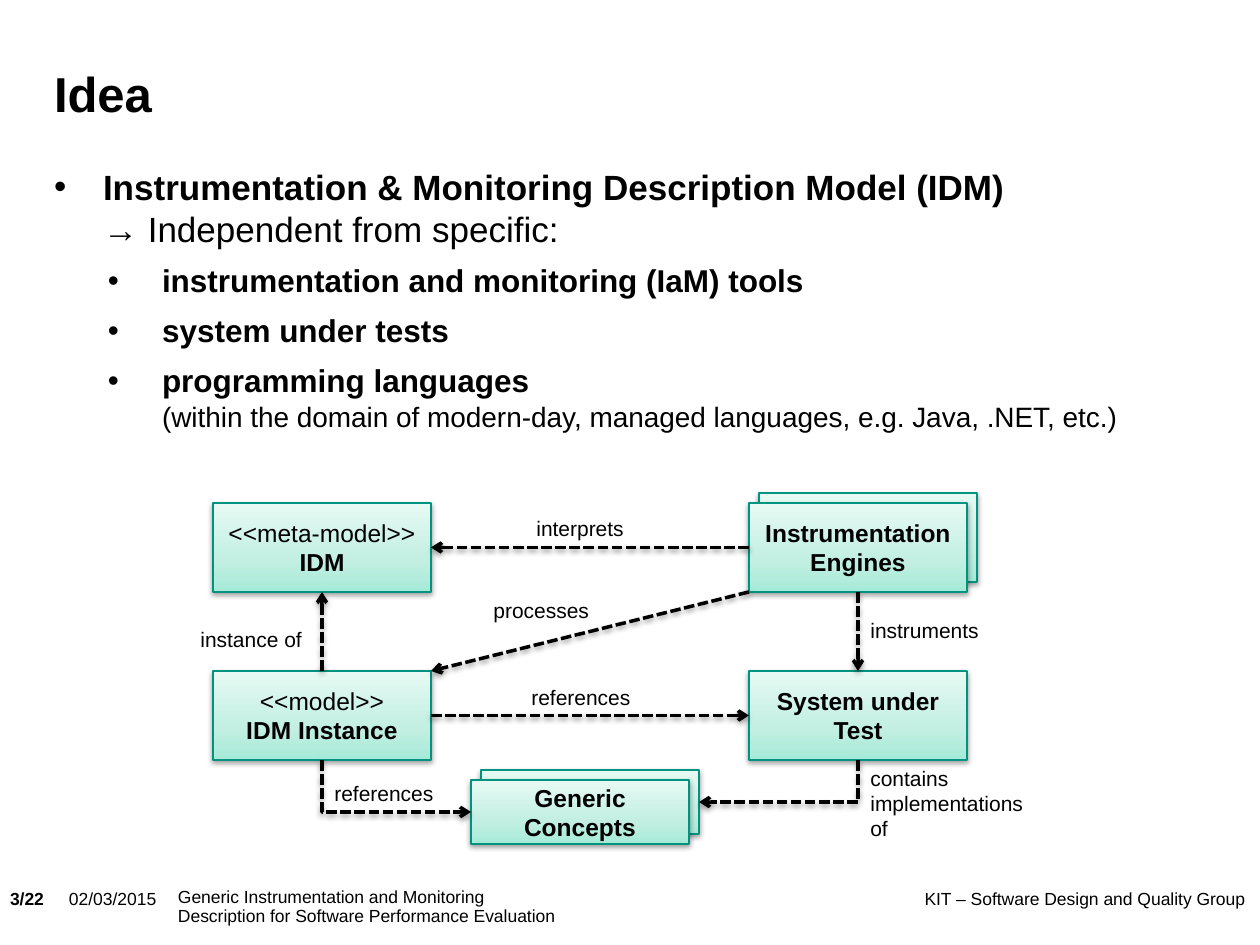
import copy

import pptx
import pptx.dml.color
import pptx.enum.dml
import pptx.enum.shapes
import pptx.enum.text
import pptx.oxml
import pptx.oxml.ns
import pptx.util
from lxml import etree

SCALE = 914400 / 126
HUES = {"ink": "000000", "edge": "00937F",
        "low": "A6EAD8", "mid": "C2EFE2", "high": "E7FAF4"}
ALIGN = pptx.enum.text.PP_ALIGN
ANCHOR = pptx.enum.text.MSO_ANCHOR
TOP, LEFT, BOTTOM, RIGHT = range(4)
qn = pptx.oxml.ns.qn


def px(n):
    return pptx.util.Emu(round(n * SCALE))


def rgb(name):
    return pptx.dml.color.RGBColor.from_string(HUES[name])


def place(shape, box):
    shape.left, shape.top, shape.width, shape.height = map(px, box)


def inset(frame):
    """Drop all margins and wrap the text."""
    frame.margin_left = frame.margin_right = 0
    frame.margin_top = frame.margin_bottom = 0
    frame.word_wrap = True
    frame.auto_size = pptx.enum.text.MSO_AUTO_SIZE.NONE


def add_run(para, text, size, bold=False):
    run = para.add_run()
    run.text = text
    font = run.font
    font.name, font.size, font.bold = "Arial", pptx.util.Pt(size), bold
    font.color.rgb = rgb("ink")


def write(frame, lines, size, align=ALIGN.LEFT, space=None):
    """Write one paragraph for each (text, bold) pair."""
    for i, (text, bold) in enumerate(lines):
        para = frame.add_paragraph() if i else frame.paragraphs[0]
        para.alignment = align
        para.line_spacing = space
        add_run(para, text, size, bold)


def add_shadow(shape):
    props = shape._element.spPr
    for old in props.findall(qn("a:effectLst")):
        props.remove(old)
    props.append(pptx.oxml.parse_xml(
        f'<a:effectLst {pptx.oxml.ns.nsdecls("a")}>'
        '<a:outerShdw blurRad="40000" dist="20000" dir="5400000" rotWithShape="0">'
        f'<a:srgbClr val="{HUES["ink"]}"><a:alpha val="38000"/></a:srgbClr>'
        '</a:outerShdw></a:effectLst>'))


def add_title(slide, box):
    title = slide.shapes.title
    place(title, box)
    inset(title.text_frame)
    title.text_frame.vertical_anchor = ANCHOR.BOTTOM
    write(title.text_frame, [("Idea", True)], 28)


def add_list(slide, box):
    body = slide.placeholders[1]
    place(body, box)
    frame = body.text_frame
    inset(frame)
    items = [
        (0, [[("Instrumentation & Monitoring Description Model (IDM)", 20, True)],
             [("→ ", 20, True), ("Independent from specific:", 20, False)]]),
        (1, [[("instrumentation and monitoring (IaM) tools", 18, True)]]),
        (1, [[("system under tests", 18, True)]]),
        (1, [[("programming languages", 18, True)],
             [("(within the domain of modern-day, managed languages, "
               "e.g. Java, .NET, etc.)", 16, False)]]),
    ]
    for i, (level, lines) in enumerate(items):
        para = frame.add_paragraph() if i else frame.paragraphs[0]
        props = para._p.get_or_add_pPr()
        margin, hang = ((49, 49), (108, 54))[level]
        props.set("marL", str(px(margin)))
        props.set("indent", str(-px(hang)))
        etree.SubElement(props, qn("a:buFont"), typeface="Arial")
        etree.SubElement(props, qn("a:buChar"), char="•")
        para.level = level
        para.alignment = ALIGN.LEFT
        para.space_before = pptx.util.Pt(7 if i else 0)
        for j, line in enumerate(lines):
            if j:
                para.add_line_break()
            for text, size, bold in line:
                add_run(para, text, size, bold)


def add_card(slide, box, lines=()):
    card = slide.shapes.add_shape(
        pptx.enum.shapes.MSO_SHAPE.RECTANGLE, *map(px, box))
    card.fill.gradient()
    card.fill.gradient_angle = 90
    first = card._element.spPr.find(".//" + qn("a:gs"))
    first.addnext(copy.deepcopy(first))
    tints = (("low", 0), ("mid", 0.35), ("high", 1))
    for stop, (hue, spot) in zip(card.fill.gradient_stops, tints):
        stop.color.rgb = rgb(hue)
        stop.position = spot
    card.line.color.rgb = rgb("edge")
    card.line.width = pptx.util.Pt(0.75)
    add_shadow(card)
    card.text_frame.word_wrap = True
    card.text_frame.vertical_anchor = ANCHOR.MIDDLE
    write(card.text_frame, lines, 14, ALIGN.CENTER)
    return card


def add_stack(slide, box, lines):
    """Return the back and front cards of a pair."""
    x, y, w, h = box
    return add_card(slide, (x + 10, y - 10, w, h)), add_card(slide, box, lines)


def add_arrow(slide, start=(0, 0), end=(0, 0), tie=None):
    """Draw a dashed arrow between points, or between (card, side) ties."""
    line = slide.shapes.add_connector(
        pptx.enum.shapes.MSO_CONNECTOR.STRAIGHT, *map(px, (*start, *end)))
    if tie:
        line.begin_connect(*tie[0])
        line.end_connect(*tie[1])
    line.line.color.rgb = rgb("ink")
    line.line.width = pptx.util.Pt(2)
    line.line.dash_style = pptx.enum.dml.MSO_LINE.SQUARE_DOT
    etree.SubElement(line.line._get_or_add_ln(), qn("a:tailEnd"), type="arrow")
    add_shadow(line)
    return line


def add_elbow(slide, *tie):
    """Draw an arrow that goes down, then sideways."""
    line = add_arrow(slide, tie=tie)
    right = line.end_x > line.begin_x
    x, y, w, h = line.left, line.top, line.width, line.height
    props = line._element.spPr
    props.find(qn("a:prstGeom")).set("prst", "bentConnector2")
    frame = props.find(qn("a:xfrm"))
    frame.set("rot", str((270 if right else 90) * 60000))
    frame.set("flipH", "1" if right else "0")
    frame.set("flipV", "0")
    line.left, line.top = x + (w - h) // 2, y + (h - w) // 2
    line.width, line.height = h, w


def add_label(slide, box, lines):
    label = slide.shapes.add_textbox(*map(px, box))
    label.text_frame.word_wrap = False
    write(label.text_frame, [(text, False) for text in lines], 12)


def add_graph(slide, box):
    x, y = box[:2]
    wide, high = 218, 89
    west, east, upper, lower = x + 25, x + 561, y + 11, y + 179
    meta = add_card(slide, (west, upper, wide, high),
                    [("<<meta-model>>", False), ("IDM", True)])
    model = add_card(slide, (west, lower, wide, high),
                     [("<<model>>", False), ("IDM Instance", True)])
    engine = add_stack(slide, (east, upper, wide, high),
                       [("Instrumentation Engines", True)])[1]
    system = add_card(slide, (east, lower, wide, high),
                      [("System under Test", True)])
    back, front = add_stack(slide, (x + 283, y + 288, wide, 64),
                            [("Generic Concepts", True)])

    for tie in (((model, TOP), (meta, BOTTOM)), ((engine, LEFT), (meta, RIGHT)),
                ((model, RIGHT), (system, LEFT)), ((engine, BOTTOM), (system, TOP))):
        add_arrow(slide, tie=tie)
    add_arrow(slide, (east, upper + high), (west + wide, lower))
    add_elbow(slide, (model, BOTTOM), (front, LEFT))
    add_elbow(slide, (system, BOTTOM), (back, RIGHT))

    for dx, dy, w, h, *lines in (
            (0, 128, 134, 38, "instance of"),
            (336, 17, 113, 38, "interprets"),
            (293, 99, 122, 38, "processes"),
            (331, 186, 125, 38, "references"),
            (670, 119, 135, 38, "instruments"),
            (134, 282, 125, 38, "references"),
            (670, 267, 179, 89, "contains", "implementations", "of")):
        add_label(slide, (x + dx, y + dy, w, h), lines)


def add_footer(slide, box):
    x, y, wide, h = box
    for dx, w, lines, align, space in (
            (0, 54, [("3/22", True)], ALIGN.LEFT, 1.0),
            (59, 101, [("02/03/2015", False)], ALIGN.LEFT, 1.0),
            (168, 611, [("Generic Instrumentation and Monitoring", False),
                        ("Description for Software Performance Evaluation", False)],
             ALIGN.LEFT, 0.9),
            (wide - 456, 456, [("KIT – Software Design and Quality Group", False)],
             ALIGN.RIGHT, 1.0)):
        note = slide.shapes.add_textbox(*map(px, (x + dx, y, w, h)))
        inset(note.text_frame)
        write(note.text_frame, lines, 10, align, space)


def main():
    deck = pptx.Presentation()
    deck.slide_width, deck.slide_height = px(1260), px(945)
    slide = deck.slides.add_slide(deck.slide_layouts[1])
    add_title(slide, (54, 45, 903, 77))
    add_list(slide, (54, 165, 1152, 307))
    add_graph(slide, (188, 492, 849, 356))
    add_footer(slide, (10, 888, 1235, 49))
    deck.save("out.pptx")


if __name__ == "__main__":
    main()
